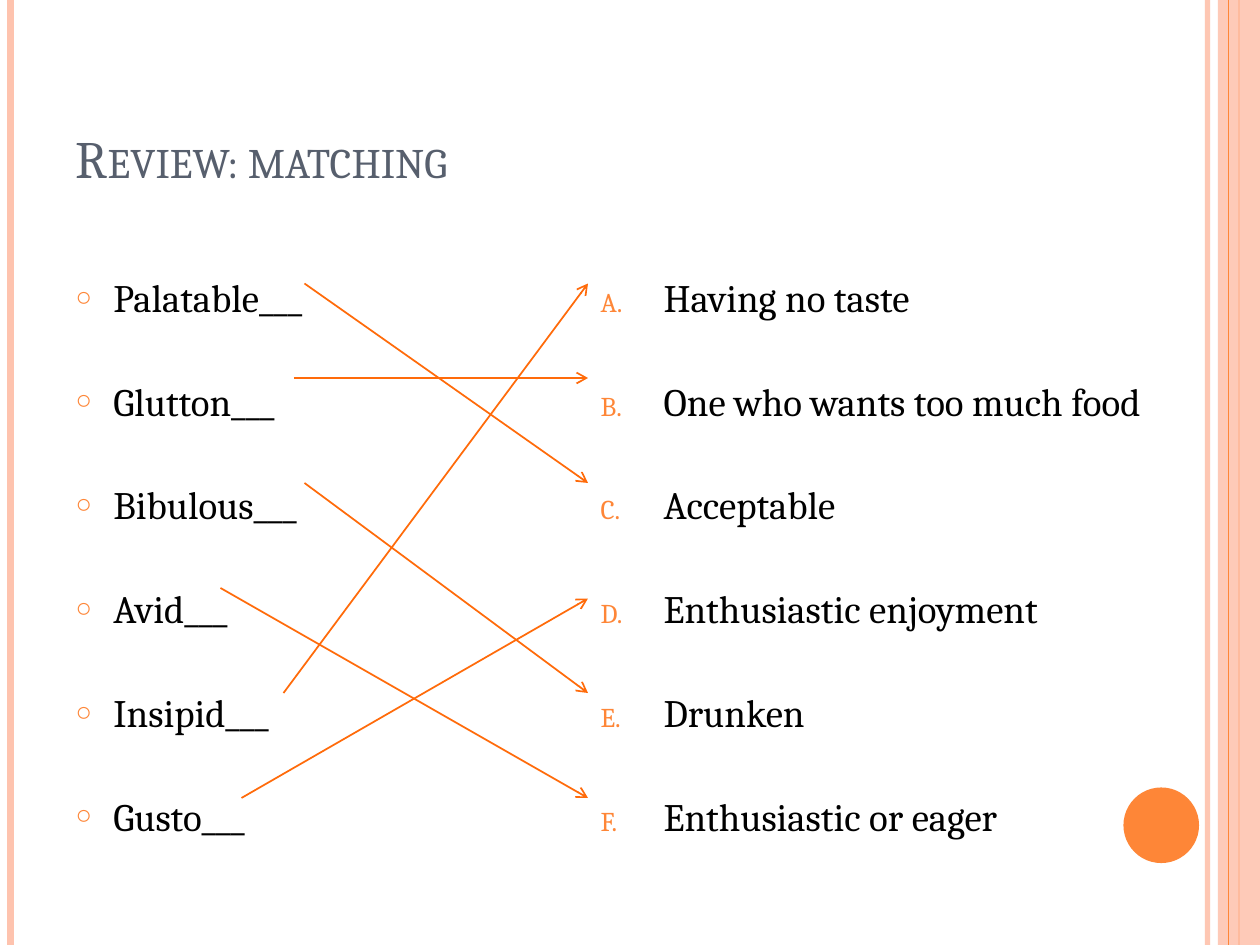
import pptx
import pptx.dml.color
import pptx.enum.shapes
import pptx.enum.text
import pptx.oxml
import pptx.oxml.ns
import pptx.util

Pt = pptx.util.Pt
RGBColor = pptx.dml.color.RGBColor
qn = pptx.oxml.ns.qn

WHITE = RGBColor(0xFF, 0xFF, 0xFF)
BLACK = RGBColor(0, 0, 0)
SLATE = RGBColor(0x57, 0x5F, 0x6D)
PEACH = RGBColor(0xFE, 0xC3, 0xAE)
ORANGE = RGBColor(0xFE, 0x86, 0x37)
ARROW_ORANGE = RGBColor(0xFF, 0x6B, 0x0A)

WIDTH, HEIGHT = 720, 540
ARROW_END = 336

# word, definition, and the arrow from the word: start x, start y, end y
ROWS = [
    ("Palatable___", "Having no taste", (174, 162, 276)),
    ("Glutton___", "One who wants too much food", (168, 216, 216)),
    ("Bibulous___", "Acceptable", (174, 276, 396)),
    ("Avid___", "Enthusiastic enjoyment", (126, 336, 456)),
    ("Insipid___", "Drunken", (162, 396, 162)),
    ("Gusto___", "Enthusiastic or eager", (138, 456, 342)),
]


def add_child(parent, tag, **attributes):
    child = parent.makeelement(qn(tag), {})
    for name, value in attributes.items():
        child.set(name, value)
    parent.append(child)
    return child


def set_opacity(element, percent):
    color = next(element.iter(qn("a:srgbClr")))
    add_child(color, "a:alpha", val=str(percent * 1000))


class MatchingSlide:
    """Holds the slide and its style, and draws each kind of element."""

    font_name = "Cambria"
    title_size = 30
    list_size = 22.2

    def __init__(self, presentation):
        self.slide = presentation.slides.add_slide(presentation.slide_layouts[3])
        self.slide.background.fill.solid()
        self.slide.background.fill.fore_color.rgb = WHITE

    def place(self, placeholder, box, anchor):
        placeholder.left, placeholder.top, placeholder.width, placeholder.height = map(Pt, box)
        frame = placeholder.text_frame
        frame.word_wrap = True
        frame.auto_size = pptx.enum.text.MSO_AUTO_SIZE.NONE
        frame.vertical_anchor = anchor
        return frame

    def style(self, paragraph, size, color):
        paragraph.alignment = pptx.enum.text.PP_ALIGN.LEFT
        paragraph.font.name = self.font_name
        paragraph.font.size = Pt(size)
        paragraph.font.color.rgb = color

    def title(self, text, box):
        frame = self.place(self.slide.shapes.title, box, pptx.enum.text.MSO_ANCHOR.BOTTOM)
        frame.text = text
        heading = frame.paragraphs[0]
        self.style(heading, self.title_size, SLATE)
        heading.runs[0].font._element.set("cap", "small")

    def list(self, index, items, box, indent, bullet_tag, **bullet):
        frame = self.place(self.slide.placeholders[index], box, pptx.enum.text.MSO_ANCHOR.TOP)
        frame.text = "\n".join(items)
        for item in frame.paragraphs:
            properties = item._p.get_or_add_pPr()
            properties.set("marL", str(Pt(indent)))
            properties.set("indent", str(-Pt(indent)))
            add_child(add_child(properties, "a:buClr"), "a:srgbClr", val=str(ORANGE))
            add_child(properties, "a:buSzPct", val="70000")
            add_child(properties, bullet_tag, **bullet)
            item.line_spacing = 2.0
            item.space_before = Pt(6)
            self.style(item, self.list_size, BLACK)

    def line(self, start, end, color, width):
        connector = self.slide.shapes.add_connector(
            pptx.enum.shapes.MSO_CONNECTOR.STRAIGHT, *map(Pt, (*start, *end)))
        connector.line.color.rgb = color
        connector.line.width = Pt(width)
        add_child(connector._element.spPr, "a:effectLst")
        return connector

    def stripe(self, x, color, width):
        return self.line((x, 0), (x, HEIGHT), color, width)

    def arrow(self, start, end):
        connector = self.line(start, end, ARROW_ORANGE, 1)
        add_child(connector.line._get_or_add_ln(), "a:tailEnd", type="arrow")

    def shape(self, kind, box, color):
        shape = self.slide.shapes.add_shape(kind, *map(Pt, box))
        shape.shadow.inherit = False
        shape.fill.solid()
        shape.fill.fore_color.rgb = color
        shape.line.fill.background()
        return shape

    def send_to_back(self, count):
        """Move the last count shapes behind all others, keeping their order."""
        tree = self.slide.shapes._spTree
        for position, shape in enumerate(list(self.slide.shapes)[-count:]):
            tree.insert(2 + position, shape._element)


def main():
    presentation = pptx.Presentation()
    presentation.slide_width, presentation.slide_height = Pt(WIDTH), Pt(HEIGHT)
    review = MatchingSlide(presentation)
    shapes = pptx.enum.shapes.MSO_SHAPE

    set_opacity(review.stripe(690, PEACH, 3)._element, 93)
    review.stripe(6, PEACH, 4.5)
    review.stripe(708, ORANGE, 1.5)
    band = review.shape(shapes.RECTANGLE, (696, 0, 24, HEIGHT), PEACH)
    set_opacity(band._element.spPr, 87)
    review.stripe(702, ORANGE, 0.75)
    review.shape(shapes.OVAL, (642, 450, 43.2, 43.2), ORANGE)
    review.send_to_back(6)

    words, definitions, arrows = zip(*ROWS)
    review.title("Review: matching", (36, 21.6, 588, 90))
    review.list(1, words, (36, 126, 288, 360), 21.6, "a:buChar", char="○")
    review.list(2, definitions, (336, 126, 360, 360), 36, "a:buAutoNum", type="alphaUcPeriod")
    for x, start_y, end_y in arrows:
        review.arrow((x, start_y), (ARROW_END, end_y))

    presentation.save("out.pptx")


if __name__ == "__main__":
    main()
